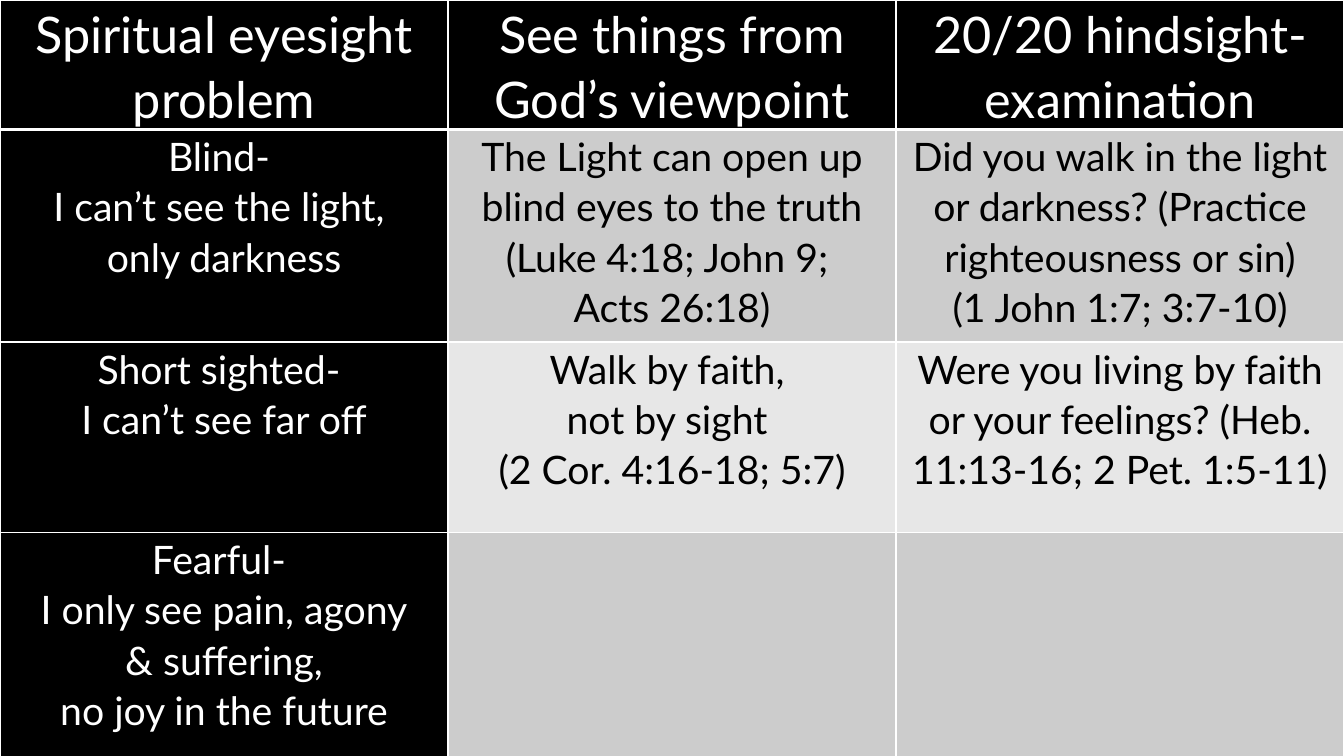
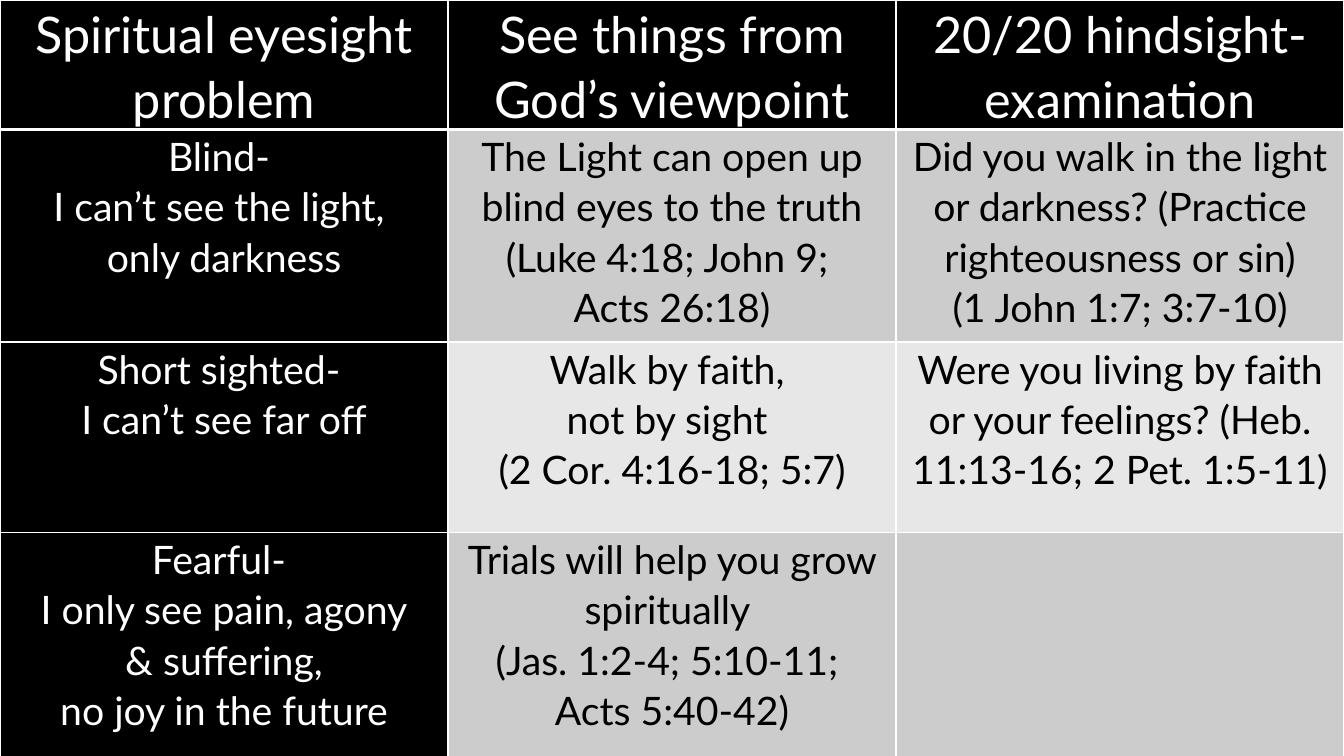
from dataclasses import dataclass

from lxml import etree
from pptx import Presentation
from pptx import util as u
from pptx.dml.color import RGBColor
from pptx.enum import text
from pptx.oxml import ns


@dataclass(frozen=True)
class Theme:
    font: str = "Lato"
    dark: str = "000000"
    light: str = "FFFFFF"
    bands: tuple = ("CCCCCC", "E7E7E7")
    head_size: int = 36
    body_size: int = 28
    line_spacing: float = 1.07
    inset: float = 0.07
    rule: int = 1
    head_rule: int = 3


HEADINGS = ["Spiritual eyesight problem", "See things from God’s viewpoint",
            "20/20 hindsight- examination"]
BLIND = ["Blind- \nI can’t see the light, \nonly darkness",
         "The Light can open up blind eyes to the truth (Luke 4:18; John 9; \nActs 26:18)",
         "Did you walk in the light or darkness? (Practice righteousness or sin)\n"
         "(1 John 1:7; 3:7-10)"]
SHORT_SIGHTED = ["Short sighted- \nI can’t see far off",
                 "Walk by faith, \nnot by sight \n(2 Cor. 4:16-18; 5:7)",
                 "Were you living by faith or your feelings? (Heb. 11:13-16; 2 Pet. 1:5-11)"]
FEARFUL = "Fearful- \nI only see pain, agony\n & suffering, \nno joy in the future"
TRIALS = "Trials will help you grow spiritually \n(Jas. 1:2-4; 5:10-11; \nActs 5:40-42)"
ROW_HEIGHTS = [1.24, 2.11, 1.89, 2.26]


class Deck:
    def __init__(self, theme):
        self.theme = theme
        self.prs = Presentation()
        self.prs.slide_width, self.prs.slide_height = u.Inches(13.33), u.Inches(7.5)
        self.s = None

    def add_slide(self):
        self.s = self.prs.slides.add_slide(self.prs.slide_layouts[6])
        self.paint(self.s.background.fill, self.theme.dark)

    def paint(self, fill, color):
        fill.solid()
        fill.fore_color.rgb = RGBColor.from_string(color)

    def add_grid(self, rows, heights):
        """Fill the slide with a table: dark headings and first column, banded body."""
        t = self.theme
        width, height = self.prs.slide_width, self.prs.slide_height
        frame = self.s.shapes.add_table(len(rows), len(rows[0]), 0, 0, width, height)
        table = frame.table
        for row, h in zip(table.rows, heights):
            row.height = u.Inches(h)
        for i, row in enumerate(rows):
            for j, words in enumerate(row):
                cell = table.cell(i, j)
                dark = i == 0 or j == 0
                self.add_borders(cell, top=t.head_rule if i == 1 else t.rule,
                                 bottom=t.head_rule if i == 0 else t.rule)
                self.paint(cell.fill, t.dark if dark else t.bands[(i - 1) % 2])
                self.set_text(cell, words, t.head_size if i == 0 else t.body_size,
                              t.light if dark else t.dark)

    def add_borders(self, cell, top, bottom):
        rule = self.theme.rule
        props = cell._tc.get_or_add_tcPr()
        for side, points in (("L", rule), ("R", rule), ("T", top), ("B", bottom)):
            ln = etree.SubElement(props, ns.qn(f"a:ln{side}"), w=str(u.Pt(points)))
            fill = etree.SubElement(ln, ns.qn("a:solidFill"))
            etree.SubElement(fill, ns.qn("a:srgbClr"), val=self.theme.light)

    def set_text(self, cell, words, size, color):
        t = self.theme
        cell.margin_left = cell.margin_right = u.Inches(t.inset)
        cell.margin_top = cell.margin_bottom = 0
        tf = cell.text_frame
        tf.text = words
        for p in tf.paragraphs:
            p.alignment = text.PP_ALIGN.CENTER
            p.line_spacing = t.line_spacing
            p.font.name, p.font.size = t.font, u.Pt(size)
            p.font.color.rgb = RGBColor.from_string(color)


def main():
    deck = Deck(Theme())
    for viewpoint in ("", TRIALS):
        deck.add_slide()
        deck.add_grid([HEADINGS, BLIND, SHORT_SIGHTED, [FEARFUL, viewpoint, ""]], ROW_HEIGHTS)
    deck.prs.save("out.pptx")


if __name__ == "__main__":
    main()
